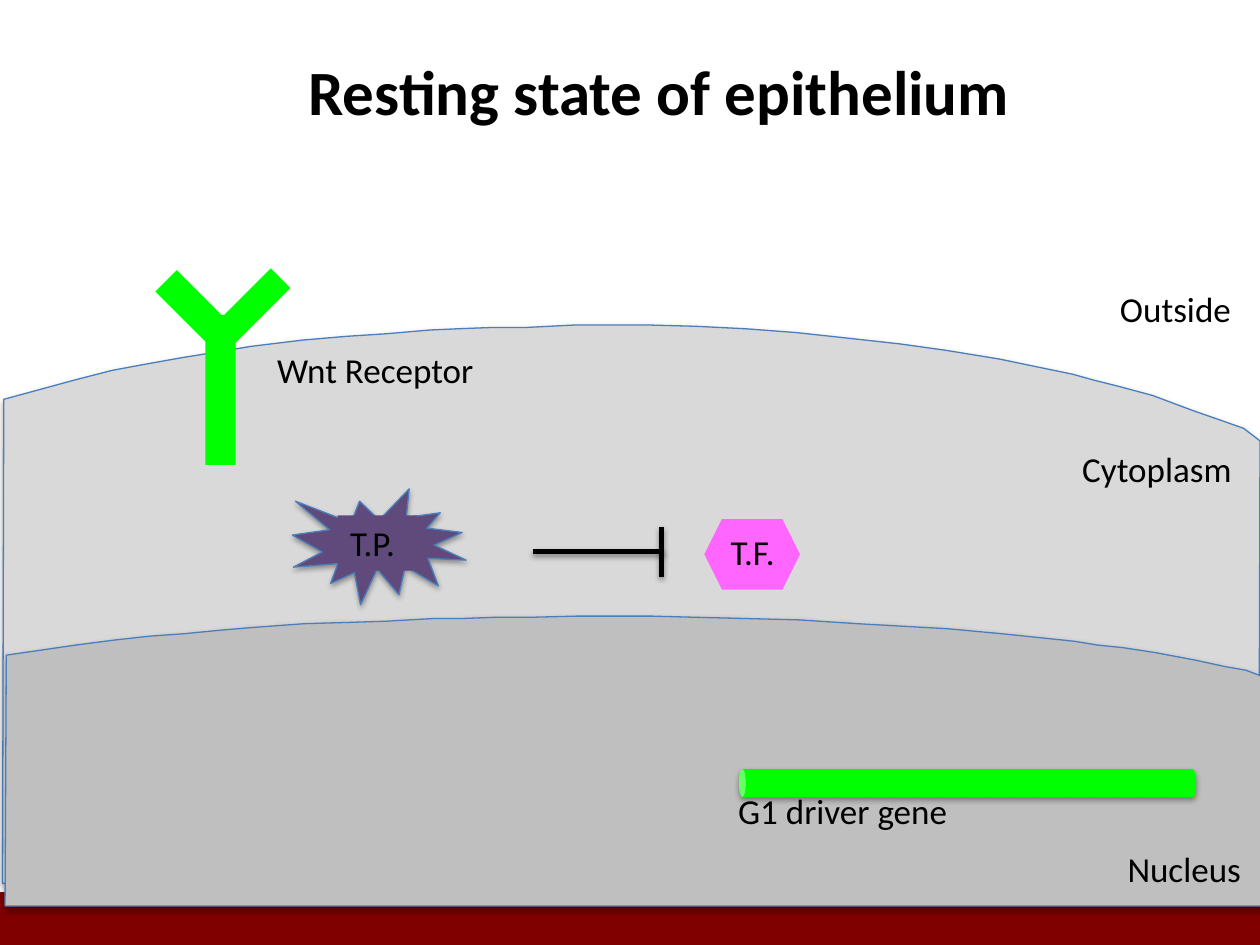
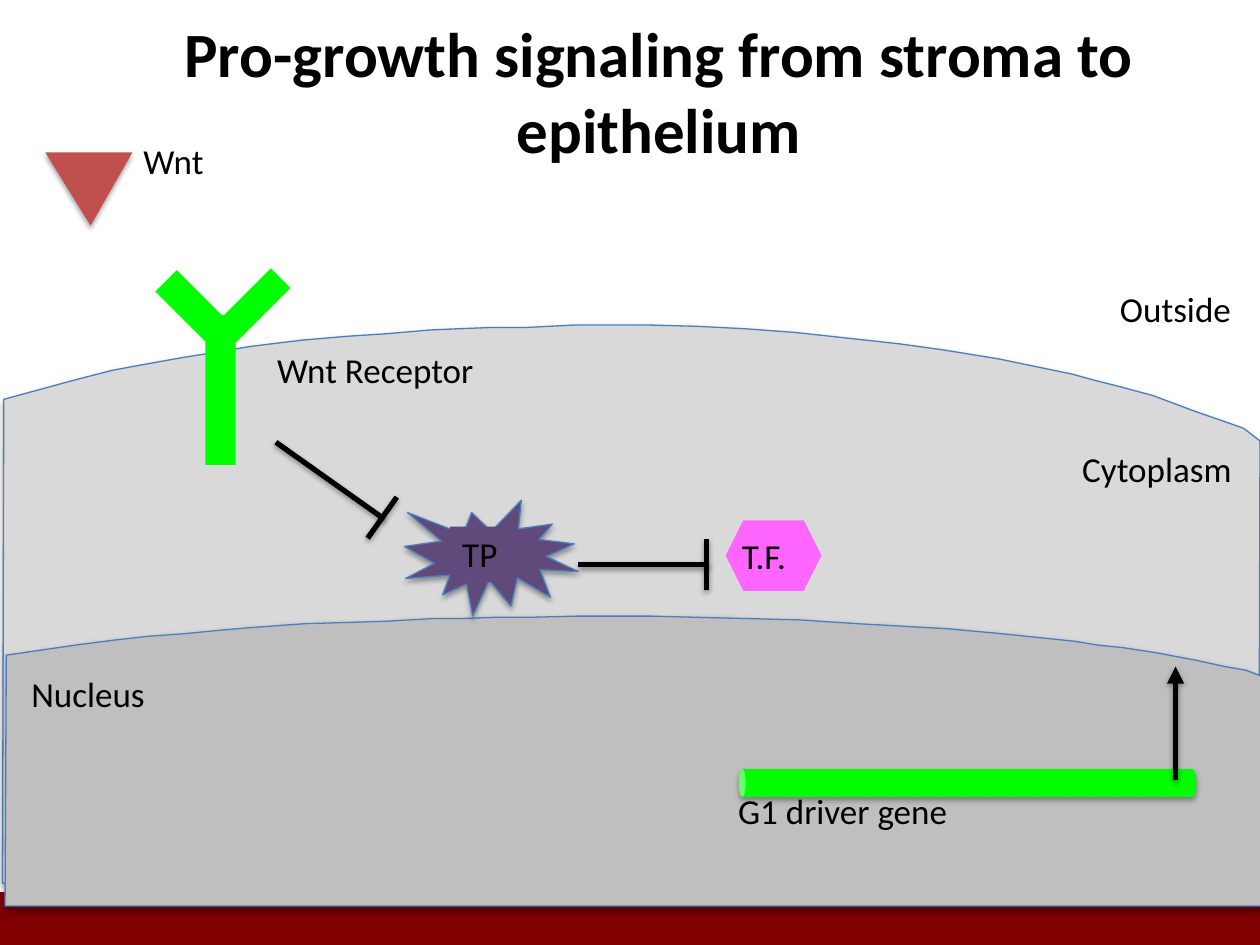
"""Build two slides on Wnt signaling in an epithelial cell."""
import math

import pptx
import pptx.dml.color
import pptx.enum.shapes
import pptx.enum.text
import pptx.oxml.ns
import pptx.util
from lxml import etree

PX = 9144
SHAPES = pptx.enum.shapes.MSO_SHAPE
BLACK, GREEN, PURPLE, PINK = "000000", "00FF00", "604A7B", "FF66FF"
MAROON, RED, OUTLINE = "800000", "C0504D", "4B7EBC"
CYTOPLASM, NUCLEUS = "D9D9D9", "BFBFBF"
MEMBRANE = [
    (3, 317), (58, 302), (89, 294), (116, 289), (144, 284), (175, 279), (199, 275),
    (240, 270), (275, 267), (306, 265), (341, 262), (363, 261), (390, 260), (417, 260),
    (456, 258), (483, 258), (515, 258), (552, 259), (592, 261), (632, 264), (678, 269),
    (714, 273), (750, 278), (793, 285), (822, 291), (851, 297), (869, 302), (889, 307),
    (915, 314), (947, 326), (970, 334), (987, 340), (1000, 350), (999, 701), (2, 701),
]
MEMBRANE_TOP, NUCLEUS_TOP, NUCLEUS_SQUASH = 258, 489, 0.52


def color(text):
    return pptx.dml.color.RGBColor.from_string(text)


def emu(*lengths):
    return [round(length * PX) for length in lengths]


def qn(tag):
    return pptx.oxml.ns.qn(tag)


class Canvas:
    font = "Calibri"
    label_size = 20
    title_size = 36
    label_height = 44

    def __init__(self, deck):
        self.deck = deck
        self.page = None

    def start_page(self, title):
        self.page = self.deck.slides.add_slide(self.deck.slide_layouts[5])
        box = self.page.shapes.title
        box.left, box.top, box.width, box.height = emu(50, 9, 946, 125)
        frame = box.text_frame
        frame.word_wrap = True
        frame.auto_size = pptx.enum.text.MSO_AUTO_SIZE.NONE
        frame.vertical_anchor = pptx.enum.text.MSO_ANCHOR.MIDDLE
        para = frame.paragraphs[0]
        para.alignment = pptx.enum.text.PP_ALIGN.CENTER
        self.span(para, title, self.title_size, True)

    def span(self, para, text, size, bold=False):
        span = para.add_run()
        span.text = text
        span.font.name = self.font
        span.font.size = pptx.util.Pt(size)
        span.font.bold = bold
        span.font.color.rgb = color(BLACK)

    def fill_text(self, box, text, wrap=False):
        frame = box.text_frame
        frame.word_wrap = wrap
        frame.auto_size = pptx.enum.text.MSO_AUTO_SIZE.SHAPE_TO_FIT_TEXT
        frame.vertical_anchor = pptx.enum.text.MSO_ANCHOR.TOP
        para = frame.paragraphs[0]
        para.alignment = pptx.enum.text.PP_ALIGN.LEFT
        self.span(para, text, self.label_size)

    def label(self, text, left, top, width, wrap=False):
        box = self.page.shapes.add_textbox(*emu(left, top, width, self.label_height))
        self.fill_text(box, text, wrap)

    def shadow(self, effects, opacity, distance):
        outer = etree.SubElement(
            effects, qn("a:outerShdw"), blurRad=str(pptx.util.Pt(3.1)),
            dist=str(pptx.util.Pt(distance)), dir="5400000", rotWithShape="0")
        tint = etree.SubElement(outer, qn("a:srgbClr"), val=BLACK)
        etree.SubElement(tint, qn("a:alpha"), val=str(opacity * 1000))

    def paint(self, shape, fill, outline=None, shadow=False):
        shape.fill.solid()
        shape.fill.fore_color.rgb = color(fill)
        if outline:
            shape.line.color.rgb = color(outline)
            shape.line.width = pptx.util.Pt(0.75)
        else:
            shape.line.fill.background()
        shape.shadow.inherit = False
        if shadow:
            self.shadow(shape.element.spPr.find(qn("a:effectLst")), 35, 1.8)

    def shape(self, kind, at, fill, outline=None, shadow=False, turn=0):
        shape = self.page.shapes.add_shape(kind, *emu(*at))
        shape.rotation = turn
        self.paint(shape, fill, outline, shadow)
        return shape

    def region(self, points, fill):
        builder = self.page.shapes.build_freeform(*points[0], scale=PX)
        builder.add_line_segments(points[1:], close=True)
        self.paint(builder.convert_to_shape(), fill, OUTLINE, True)

    def line(self, start, end, width=3, arrow=False):
        line = self.page.shapes.add_connector(
            pptx.enum.shapes.MSO_CONNECTOR.STRAIGHT, *emu(*start, *end))
        line.line.color.rgb = color(BLACK)
        line.line.width = pptx.util.Pt(width)
        properties = line.element.spPr
        if arrow:
            etree.SubElement(properties.find(qn("a:ln")), qn("a:tailEnd"), type="triangle")
        self.shadow(etree.SubElement(properties, qn("a:effectLst")), 38, 1.6)

    def inhibition(self, start, end):
        angle = math.atan2(end[1] - start[1], end[0] - start[0])
        along, down = math.cos(angle), math.sin(angle)
        x, y = end[0] - 2 * along, end[1] - 2 * down
        reach = 20
        self.line(start, end)
        self.line((x + reach * down, y - reach * along), (x - reach * down, y + reach * along))


def draw_cell(canvas):
    nucleus = [(x + 2, round(NUCLEUS_TOP + (y - MEMBRANE_TOP) * NUCLEUS_SQUASH))
               for x, y in MEMBRANE]
    canvas.shape(SHAPES.RECTANGLE, (0, 708, 1000, 42), MAROON, shadow=True)
    canvas.region(MEMBRANE, CYTOPLASM)
    canvas.region(nucleus, NUCLEUS)
    canvas.label("Wnt Receptor", 210, 272, 179)
    canvas.shape(SHAPES.CAN, (757, 440, 22, 363), GREEN, shadow=True, turn=270)
    canvas.label("G1 driver gene", 576, 622, 377, wrap=True)
    canvas.label("Outside", 879, 223, 109)
    canvas.label("Cytoplasm", 849, 350, 140)
    for at, turn in (((163, 250, 24, 119), 0), ((141, 214, 24, 60), 315),
                     ((188, 211, 22, 67), 45)):
        canvas.shape(SHAPES.RECTANGLE, at, GREEN, turn=turn)


def draw_tp(canvas, text, left, top, text_width):
    canvas.shape(SHAPES.EXPLOSION1, (left, top, 138, 92), PURPLE, OUTLINE, True)
    plate = canvas.shape(
        SHAPES.RECTANGLE, (left + 36, top + 21, text_width, canvas.label_height), PURPLE)
    canvas.fill_text(plate, text)


def draw_tf(canvas, left, top, text_left, text_top):
    canvas.shape(SHAPES.HEXAGON, (left, top, 76, 56), PINK)
    canvas.label("T.F.", text_left, text_top, 63)


def draw_resting(canvas):
    canvas.start_page("Resting state of epithelium")
    draw_cell(canvas)
    draw_tp(canvas, "T.P.", 232, 388, 63)
    canvas.label("Nucleus", 885, 668, 111)
    canvas.inhibition((423, 438), (527, 438))
    draw_tf(canvas, 559, 412, 570, 416)


def draw_signaling(canvas):
    canvas.start_page("Pro-growth signaling from stroma to epithelium")
    draw_cell(canvas)
    draw_tp(canvas, "TP", 321, 397, 48)
    canvas.line((933, 619), (933, 529), 3.25, arrow=True)
    canvas.label("Nucleus", 15, 529, 111)
    canvas.label("Wnt", 104, 106, 69)
    ligand = canvas.shape(
        SHAPES.ISOSCELES_TRIANGLE, (36, 121, 69, 58), RED, shadow=True, turn=180)
    ligand.adjustments[0] = 0.48
    canvas.inhibition((219, 351), (305, 412))
    canvas.inhibition((459, 448), (563, 448))
    draw_tf(canvas, 576, 413, 579, 419)


def main():
    deck = pptx.Presentation()
    deck.slide_width, deck.slide_height = emu(1000, 750)
    canvas = Canvas(deck)
    draw_resting(canvas)
    draw_signaling(canvas)
    deck.save("out.pptx")


if __name__ == "__main__":
    main()
